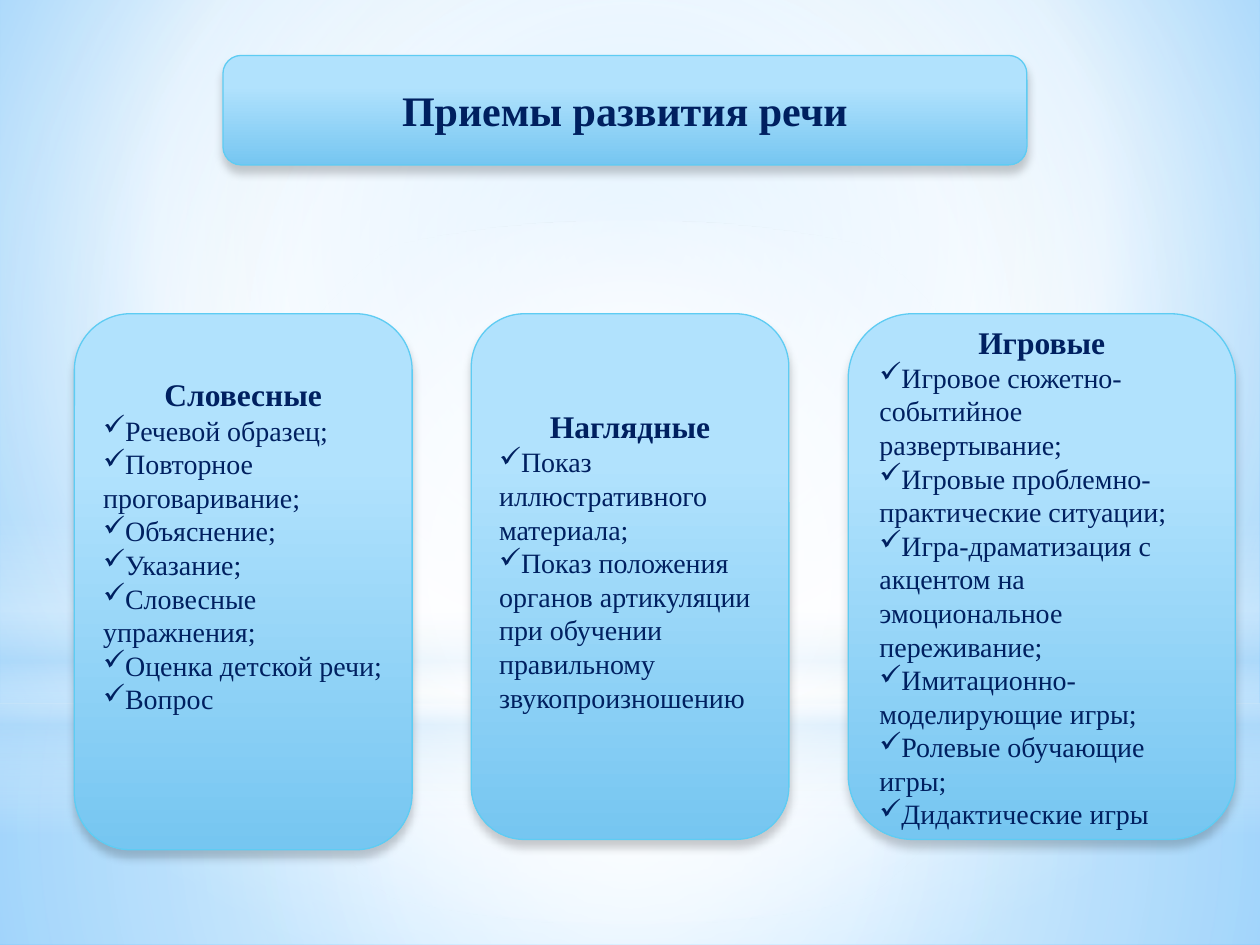
from dataclasses import dataclass

import pptx
import pptx.dml.color
import pptx.enum.shapes
import pptx.enum.text
import pptx.oxml
import pptx.oxml.ns
import pptx.util
from lxml import etree

Pt = pptx.util.Pt
RGBColor = pptx.dml.color.RGBColor
Shape = pptx.enum.shapes.MSO_SHAPE
Align = pptx.enum.text.PP_ALIGN
qn = pptx.oxml.ns.qn

WHITE = RGBColor(0xFF, 0xFF, 0xFF)
HAZE = RGBColor(0xB4, 0xDC, 0xFA)
SKY = RGBColor(0x9E, 0xD5, 0xFF)
DEEP_SKY = RGBColor(0x5B, 0xB9, 0xFF)
CARD_TOP = RGBColor(0xB1, 0xE2, 0xFD)
CARD_BOTTOM = RGBColor(0x76, 0xC6, 0xF1)
CARD_EDGE = RGBColor(0x5E, 0xCC, 0xF3)
NAVY = RGBColor(0x00, 0x20, 0x60)
BLACK = RGBColor(0x00, 0x00, 0x00)

FONT = "Times New Roman"
CENTER = (50, 50, 50, 50)
WIDTH, HEIGHT = 720, 540
COLUMN_TOP = 179.3


@dataclass(frozen=True)
class Stop:
    position: int
    color: RGBColor
    opacity: int = 100


@dataclass(frozen=True)
class Box:
    left: float
    top: float
    width: float
    height: float


@dataclass(frozen=True)
class Glow:
    kind: Shape
    box: Box
    stops: tuple[Stop, ...]
    focus: tuple[int, ...] | None = CENTER  # None gives a vertical gradient


@dataclass(frozen=True)
class Card:
    box: Box
    heading: str
    heading_size: int
    items: tuple[str, ...] = ()
    bottom_inset: float = 3.6


GLOWS = (
    Glow(Shape.RECTANGLE, Box(0, 401.8, WIDTH, 138.2),
         (Stop(0, WHITE, 91), Stop(37, WHITE, 76), Stop(100, HAZE, 79))),
    Glow(Shape.RECTANGLE, Box(0, 0, WIDTH, 401.8),
         (Stop(0, WHITE, 89), Stop(48, WHITE, 62), Stop(100, HAZE, 79))),
    Glow(Shape.RECTANGLE, Box(0, 296.6, WIDTH, 180),
         (Stop(0, WHITE, 0), Stop(29, WHITE, 30), Stop(45, HAZE, 40),
          Stop(55, WHITE, 26), Stop(65, HAZE, 60), Stop(100, WHITE, 0)), None),
    Glow(Shape.OVAL, Box(0, 126, WIDTH, 401.8),
         (Stop(0, WHITE), Stop(56, WHITE, 0))),
)

CARDS = (
    Card(Box(127.4, 31.7, 459.4, 62.6), "Приемы развития речи", 24),
    Card(Box(42.5, COLUMN_TOP, 193, 306.3), "Словесные", 18,
         ("Речевой образец;", "Повторное проговаривание;", "Объяснение;",
          "Указание;", "Словесные упражнения;", "Оценка детской речи;",
          "Вопрос"), 45),
    Card(Box(484.7, COLUMN_TOP, 221.2, 300.4), "Игровые", 18,
         ("Игровое сюжетно-событийное развертывание;",
          "Игровые проблемно-практические ситуации;",
          "Игра-драматизация с акцентом на эмоциональное переживание;",
          "Имитационно-моделирующие игры;", "Ролевые обучающие игры;",
          "Дидактические игры")),
    Card(Box(269.3, COLUMN_TOP, 181.5, 300.4), "Наглядные", 18,
         ("Показ иллюстративного материала;",
          "Показ положения органов артикуляции при обучении правильному "
          "звукопроизношению"), 22),
)


def add_color(parent, color: RGBColor, opacity: int) -> None:
    node = etree.SubElement(parent, qn("a:srgbClr"), val=str(color))
    if opacity < 100:
        etree.SubElement(node, qn("a:alpha"), val=str(opacity * 1000))


def set_gradient(properties, stops: tuple[Stop, ...],
                 focus: tuple[int, ...] | None = None) -> None:
    """Replace the solid fill in the properties with a gradient."""
    gradient = pptx.oxml.parse_xml(
        f'<a:gradFill {pptx.oxml.ns.nsdecls("a")} rotWithShape="1"/>')
    stop_list = etree.SubElement(gradient, qn("a:gsLst"))
    for stop in stops:
        node = etree.SubElement(stop_list, qn("a:gs"), pos=str(stop.position * 1000))
        add_color(node, stop.color, stop.opacity)
    if focus:
        circle = etree.SubElement(gradient, qn("a:path"), {"path": "circle"})
        sides = {side: str(value * 1000) for side, value in zip("ltrb", focus)}
        etree.SubElement(circle, qn("a:fillToRect"), sides)
    else:
        etree.SubElement(gradient, qn("a:lin"), ang="5400000", scaled="0")
    solid = properties.find(qn("a:solidFill"))
    properties.replace(solid, gradient)


def add_shape(slide, kind: Shape, box: Box, stops: tuple[Stop, ...],
              focus: tuple[int, ...] | None = None):
    shape = slide.shapes.add_shape(
        kind, Pt(box.left), Pt(box.top), Pt(box.width), Pt(box.height))
    shape.shadow.inherit = False
    shape.fill.solid()
    set_gradient(shape.element.spPr, stops, focus)
    shape.line.fill.background()
    return shape


def add_run(paragraph, text: str, size: int, bold: bool) -> None:
    run = paragraph.add_run()
    run.text = text
    run.font.name = FONT
    run.font.size = Pt(size)
    run.font.bold = bold
    run.font.color.rgb = NAVY


def add_card(slide, card: Card) -> None:
    body = add_shape(slide, Shape.ROUNDED_RECTANGLE, card.box,
                     (Stop(28, CARD_TOP), Stop(100, CARD_BOTTOM)))
    body.line.color.rgb = CARD_EDGE
    body.line.width = Pt(0.75)

    # Soft shadow below the card
    effects = body.element.spPr.find(qn("a:effectLst"))
    shadow = etree.SubElement(
        effects, qn("a:outerShdw"), blurRad=str(Pt(5)), dist=str(Pt(4)),
        dir="5400000", rotWithShape="0")
    add_color(shadow, BLACK, 20)

    # Heading and ticked items
    frame = body.text_frame
    frame.word_wrap = True
    frame.vertical_anchor = pptx.enum.text.MSO_ANCHOR.MIDDLE
    frame.margin_bottom = Pt(card.bottom_inset)
    heading = frame.paragraphs[0]
    heading.alignment = Align.CENTER
    add_run(heading, card.heading, card.heading_size, True)
    for text in card.items:
        item = frame.add_paragraph()
        item.alignment = Align.LEFT
        etree.SubElement(item._p.get_or_add_pPr(), qn("a:buChar"), char="✓")
        add_run(item, text, 16, False)


def main() -> None:
    deck = pptx.Presentation()
    deck.slide_width, deck.slide_height = Pt(WIDTH), Pt(HEIGHT)
    slide = deck.slides.add_slide(deck.slide_layouts[6])

    # Sky background with layered light
    slide.background.fill.solid()
    set_gradient(slide.element.find(".//" + qn("p:bgPr")),
                 (Stop(0, SKY), Stop(60, WHITE), Stop(100, DEEP_SKY)),
                 (20, 10, 20, 60))
    for glow in GLOWS:
        add_shape(slide, glow.kind, glow.box, glow.stops, glow.focus)

    # Title and the three groups of techniques
    for card in CARDS:
        add_card(slide, card)
    deck.save("out.pptx")


if __name__ == "__main__":
    main()
